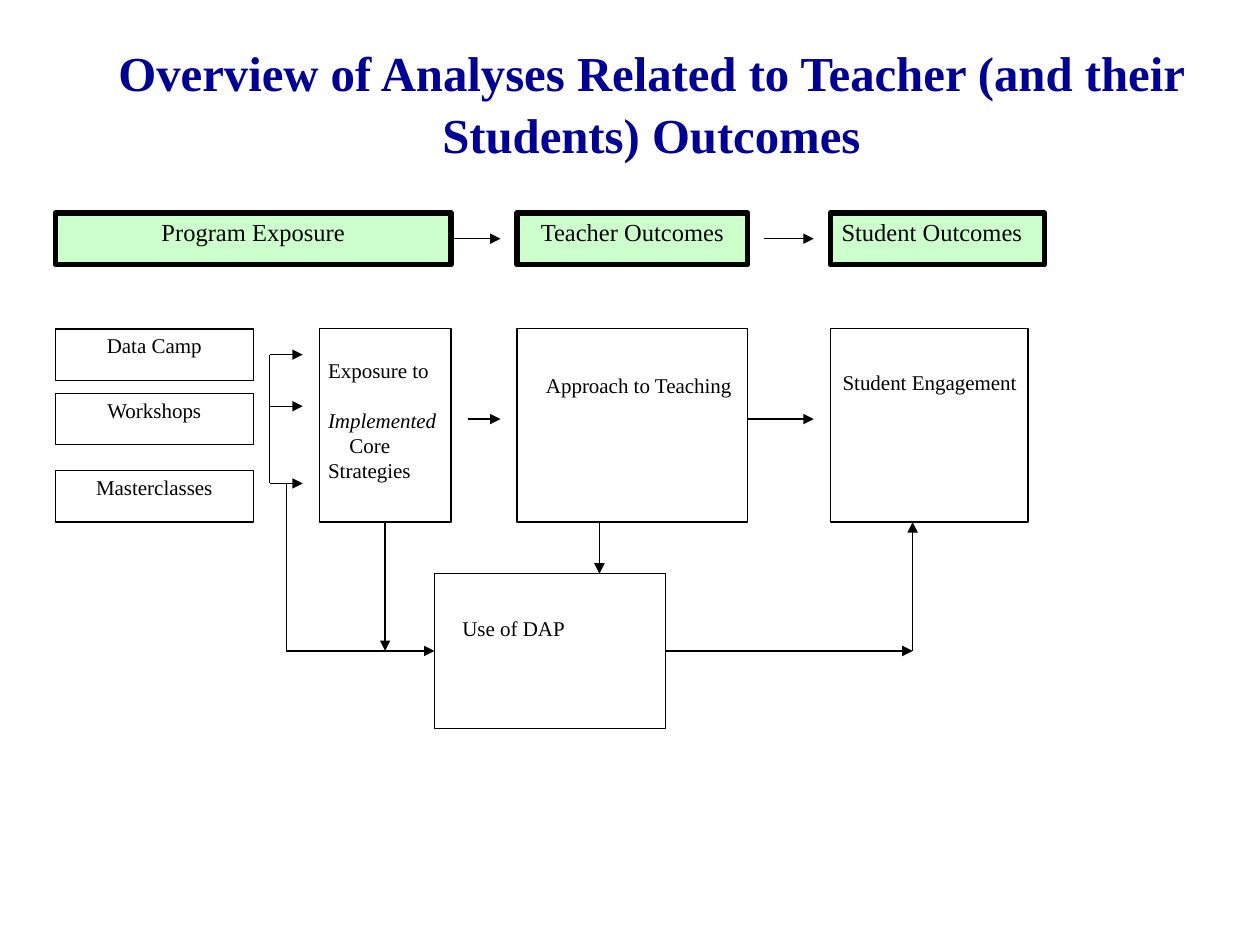
from dataclasses import dataclass
from lxml.etree import SubElement
from pptx import Presentation
from pptx.dml.color import RGBColor
from pptx.enum.shapes import MSO_CONNECTOR as Link, MSO_SHAPE as Shape
from pptx.enum.text import MSO_ANCHOR as Anchor, PP_ALIGN as Align
from pptx.oxml.ns import qn
from pptx.util import Inches, Pt

FACE = "Times New Roman"
INK, NAVY, WHITE, MINT = "000000", "000099", "FFFFFF", "CCFFCC"
TOP, LEFT, BOTTOM, RIGHT = range(4)


@dataclass
class Grid:
    """A box on a slide, cut into columns and rows."""
    slide: object
    left: float
    top: float
    width: float
    height: float
    cols: int
    rows: int

    def spot(self, col, row):
        """Return the place of a grid point."""
        return (Inches(self.left + self.width * col / self.cols),
                Inches(self.top + self.height * row / self.rows))

    def span(self, col, row, wide, high):
        """Return left, top, width and height of a block of cells."""
        x, y = self.spot(col, row)
        right, base = self.spot(col + wide, row + high)
        return x, y, right - x, base - y


def color(code):
    """Turn a hex string into a colour."""
    return RGBColor.from_string(code)


def style(para, size, code=INK, align=Align.LEFT):
    """Set the font and alignment of a paragraph."""
    para.alignment = align
    font = para.font
    font.name, font.size = FACE, Pt(size)
    font.color.rgb = color(code)
    return font


def add_box(grid, cells, lines, size=12, align=Align.LEFT, pad=(0.07, 0.03),
            fill=WHITE, edge=0.75):
    """Draw a bordered box with its lines of text."""
    box = grid.slide.shapes.add_shape(Shape.RECTANGLE, *grid.span(*cells))
    box.shadow.inherit = False
    box.fill.solid()
    box.fill.fore_color.rgb = color(fill)
    box.line.color.rgb = color(INK)
    box.line.width = Pt(edge)
    frame = box.text_frame
    frame.word_wrap = True
    frame.vertical_anchor = Anchor.TOP
    frame.margin_left, frame.margin_top = map(Inches, pad)
    frame.margin_right, frame.margin_bottom = Inches(0.07), Inches(0.03)
    frame.text = "\n".join(lines)
    for para in frame.paragraphs:
        style(para, size, align=align)
    return box


def add_line(grid, start, end, head=True, source=None, target=None):
    """Draw a line between grid points, joined to boxes where given."""
    line = grid.slide.shapes.add_connector(
        Link.STRAIGHT, *grid.spot(*start), *grid.spot(*end))
    line.line.color.rgb = color(INK)
    line.line.width = Pt(0.75)
    if head:
        SubElement(line.line._get_or_add_ln(), qn("a:tailEnd"), type="triangle")
    SubElement(line._element.spPr, qn("a:effectLst"))
    if source:
        line.begin_connect(*source)
    if target:
        line.end_connect(*target)


def add_title(slide, text, left, top, width, height):
    """Place the slide title."""
    box = slide.shapes.add_textbox(*map(Inches, (left, top, width, height)))
    frame = box.text_frame
    frame.word_wrap = True
    frame.vertical_anchor = Anchor.MIDDLE
    frame.margin_left = frame.margin_right = frame.margin_top = 0
    frame.margin_bottom = Inches(0.43)
    frame.text = text
    para = frame.paragraphs[0]
    para.line_spacing = 1.05
    style(para, 27.9, NAVY, Align.CENTER).bold = True


def add_heads(grid):
    """Place the row of stage headings."""
    look = dict(size=14, fill=MINT, edge=3)
    first = add_box(grid, (0, 0, 24, 4), ["Program Exposure"],
                    align=Align.CENTER, **look)
    add_box(grid, (28, 0, 14, 4), ["Teacher Outcomes"],
            align=Align.CENTER, **look)
    add_box(grid, (47, 0, 13, 4), ["Student Outcomes"], pad=(0.09, 0.03), **look)
    add_line(grid, (24, 2), (27, 2), source=(first, RIGHT))
    add_line(grid, (43, 2), (46, 2))


def add_inputs(grid):
    """Place the program parts and the bracket that gathers them."""
    parts = {"Data Camp": 9, "Workshops": 14, "Masterclasses": 20}
    for name, row in parts.items():
        add_box(grid, (0, row, 12, 4), [name], align=Align.CENTER)
    for row in (11, 15, 21):
        add_line(grid, (13, row), (15, row))
    add_line(grid, (13, 11), (13, 21), head=False)


def add_flow(grid):
    """Place the outcome boxes and the paths between them."""
    core = add_box(grid, (16, 9, 8, 15),
                   ["Exposure to", "Implemented", "Core Strategies"],
                   pad=(0.07, 0.23))
    _, done, plan = core.text_frame.paragraphs
    done.space_before = Pt(14)
    done.font.italic = True
    plan._p.get_or_add_pPr().set("indent", str(Inches(0.17)))
    add_box(grid, (28, 9, 14, 15), ["Approach to Teaching"], pad=(0.23, 0.35))
    add_box(grid, (47, 9, 12, 15), ["Student Engagement"], pad=(0.1, 0.32))
    use = add_box(grid, (23, 28, 14, 12), ["Use of DAP"], pad=(0.22, 0.33))

    add_line(grid, (25, 16), (27, 16))
    add_line(grid, (42, 16), (46, 16))
    add_line(grid, (14, 21), (14, 34), head=False)
    add_line(grid, (14, 34), (23, 34), target=(use, LEFT))
    add_line(grid, (20, 24), (20, 34), source=(core, BOTTOM))
    add_line(grid, (33, 24), (33, 28))
    add_line(grid, (37, 34), (52, 34), source=(use, RIGHT))
    add_line(grid, (52, 34), (52, 24))


def main():
    """Build the slide and save it."""
    deck = Presentation()
    deck.slide_width, deck.slide_height = Inches(10), Inches(7.5)
    slide = deck.slides.add_slide(deck.slide_layouts[6])
    add_title(slide, "Overview of Analyses Related to Teacher "
              "(and their Students) Outcomes", 0.84, 0.65, 8.66, 0.74)
    grid = Grid(slide, 0.44, 1.69, 7.85, 4.09, cols=60, rows=40)
    add_heads(grid)
    add_inputs(grid)
    add_flow(grid)
    deck.save("out.pptx")


if __name__ == "__main__":
    main()
